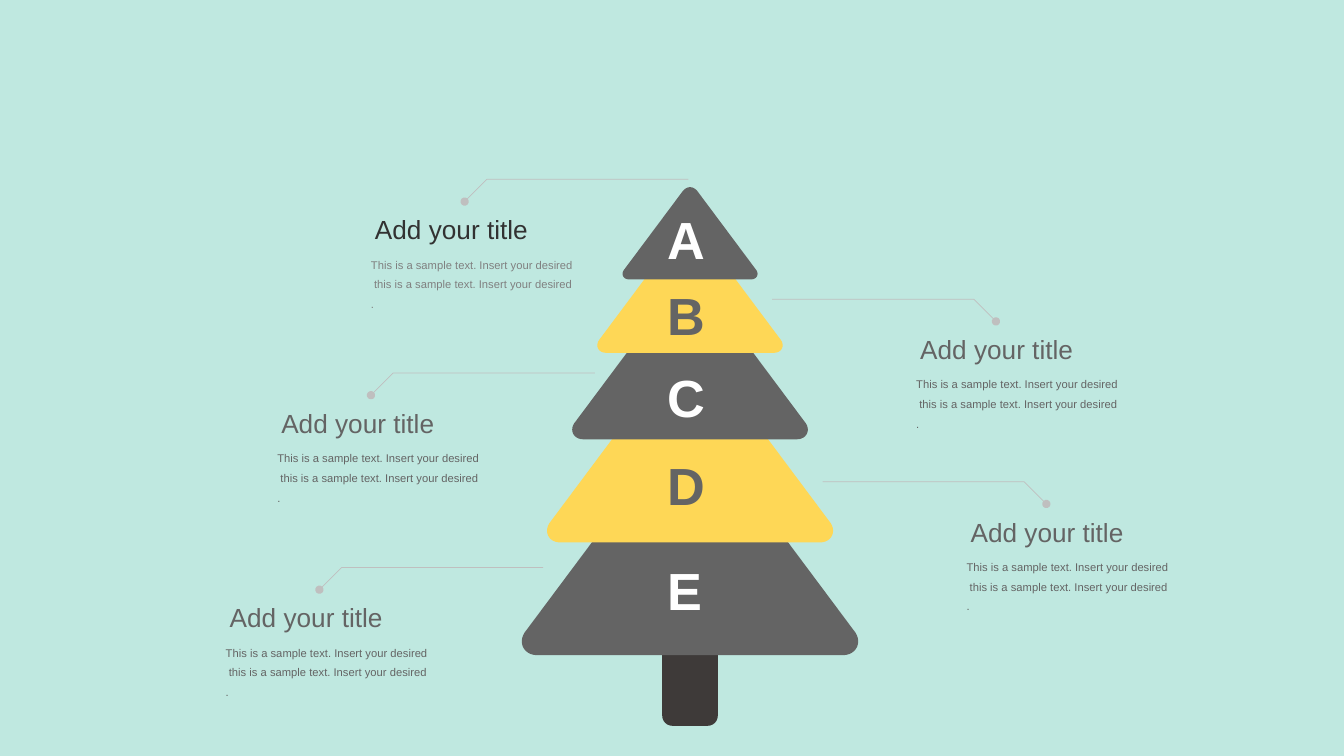
"""Build a tree of five lettered tiers, each with a called-out title and text."""
from lxml.etree import SubElement as Sub
from pptx import Presentation
from pptx.dml.color import RGBColor as Rgb
from pptx.enum.shapes import MSO_SHAPE as Kind
from pptx.enum.text import MSO_AUTO_SIZE as Auto
from pptx.oxml.ns import qn
from pptx.util import Cm, Pt

HUES = {"mint": "BFE8E0", "grey": "646464", "gold": "FED756", "bark": "3E3A39",
        "white": "FFFFFF", "ink": "323232", "mid": "808080", "pale": "BFBFBF"}
TITLE = "Add your title"
BODY = ("This is a sample text. Insert your desired  "
        "this is a sample text. Insert your desired .")

# letter, tier hue, letter hue, tier bottom, letter top
TIERS = [
    ("A", "grey", "white", 7.04, 5.11),
    ("B", "gold", "grey", 8.89, 7.01),
    ("C", "grey", "white", 11.07, 9.07),
    ("D", "gold", "grey", 13.67, 11.3),
    ("E", "grey", "white", 16.51, 13.94),
]
# line start x and y, direction, title hue, body hue
NOTES = [
    (17.35, 4.52, -1, "ink", "mid"),
    (14.99, 9.4, -1, "grey", "grey"),
    (13.69, 14.3, -1, "grey", "grey"),
    (19.46, 7.54, 1, "grey", "grey"),
    (20.73, 12.14, 1, "grey", "grey"),
]
FORMATS = {
    "letter": {"size": Pt(37.3), "bold": True, "name": "Arial"},
    "title": {"size": Pt(18.7), "name": "Arial"},
    "body": {"size": Pt(8), "name": "Arial"},
}
MID, TOP_W, STEP_W, RATIO = 17.39, 3.51, 1.31, 0.67
ARM, BEND = 5.08, 0.56
FOOT = [(0.44, 1), (0.48, 1), (0.5, 0.94), (0.47, 0.89)]
PEAK = [(0.05, 0.05), (0.02, 0), (-0.02, 0), (-0.05, 0.05)]
CURVES = [FOOT, PEAK, [(-x, y) for x, y in reversed(FOOT)]]


def curve(nodes, count=12):
    """Return points along a cubic curve."""
    for i in range(count + 1):
        t = i / count
        parts = ((1 - t) ** 3, 3 * t * (1 - t) ** 2, 3 * t * t * (1 - t), t ** 3)
        yield tuple(sum(p * n[k] for p, n in zip(parts, nodes)) for k in (0, 1))


def trace(shapes, points, close):
    """Draw a freeform through points given in centimetres."""
    first, *rest = [(Cm(x), Cm(y)) for x, y in points]
    pen = shapes.build_freeform(*first)
    pen.add_line_segments(rest, close=close)
    return pen.convert_to_shape()


def paint(shape, hue):
    """Give a shape a flat fill with no line or shadow."""
    shape.shadow.inherit = False
    shape.fill.solid()
    shape.fill.fore_color.rgb = Rgb.from_string(HUES[hue])
    shape.line.fill.background()


def write(shapes, text, box, style, hue, wrap=False):
    """Add a text box and return its paragraph."""
    frame = shapes.add_textbox(*map(Cm, box)).text_frame
    frame.word_wrap = wrap
    frame.auto_size = Auto.SHAPE_TO_FIT_TEXT
    para = frame.paragraphs[0]
    run = para.add_run()
    run.text = text
    for key, value in FORMATS[style].items():
        setattr(run.font, key, value)
    run.font.color.rgb = Rgb.from_string(HUES[hue])
    return para


def draw_tree(shapes):
    """Draw the trunk, the tiers from the bottom up, and the letters."""
    trunk = shapes.add_shape(Kind.ROUNDED_RECTANGLE, Cm(16.69), Cm(16), Cm(1.4), Cm(2.29))
    trunk.adjustments[0] = 0.18
    paint(trunk, "bark")
    for i, (_, hue, _, base, _) in reversed(list(enumerate(TIERS))):
        wide = TOP_W + i * STEP_W
        tall = wide * RATIO
        points = [(MID + x * wide, base - (1 - y) * tall)
                  for nodes in CURVES for x, y in curve(nodes)]
        paint(trace(shapes, points, True), hue)
    for text, _, _, _, top in TIERS:
        hue = next(tier[2] for tier in TIERS if tier[0] == text)
        write(shapes, text, (16.56, top, 1.47, 1.85), "letter", hue)


def draw_note(shapes, x, y, way, head, tone):
    """Draw a bent line ending in a dot, with its title and text."""
    turn = x + way * ARM
    dot, low = turn + way * BEND, y + BEND
    left, top = dot - (2.51 if way < 0 else 2.16), low + 0.18
    write(shapes, TITLE, (left, top, 4.39, 1.07), "title", head)
    para = write(shapes, BODY, (left - 0.1, top + 0.96, 5.64, 1.75), "body", tone, True)
    para.line_spacing = Pt(14)
    line = trace(shapes, [(x, y), (turn, y), (dot, low)], False)
    line.shadow.inherit = False
    line.fill.background()
    line.line.color.rgb = Rgb.from_string(HUES["pale"])
    line.line.width = Pt(0.5)
    Sub(line.element.spPr.find(qn("a:ln")), qn("a:tailEnd"), type="oval")


def main():
    """Build and save the slide."""
    deck = Presentation()
    deck.slide_width, deck.slide_height = Cm(33.87), Cm(19.05)
    slide = deck.slides.add_slide(deck.slide_layouts[6])
    slide.background.fill.solid()
    slide.background.fill.fore_color.rgb = Rgb.from_string(HUES["mint"])
    draw_tree(slide.shapes)
    for note in NOTES:
        draw_note(slide.shapes, *note)
    deck.save("out.pptx")


if __name__ == "__main__":
    main()
